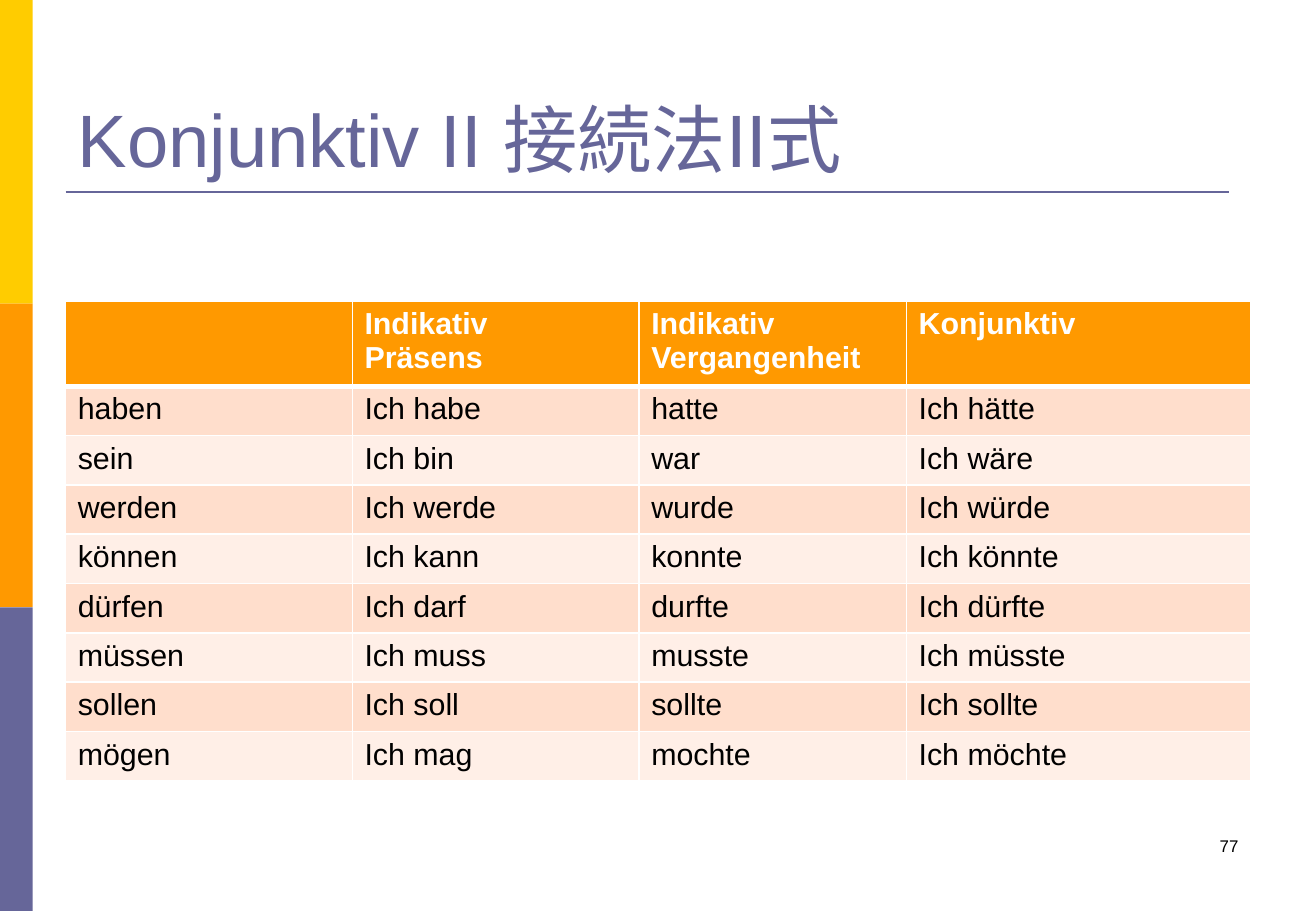
"""Build a slide with a table of German Konjunktiv II forms."""
from lxml.etree import SubElement
from pptx import Presentation
from pptx.dml.color import RGBColor
from pptx.enum.shapes import MSO_CONNECTOR, MSO_SHAPE
from pptx.enum.text import MSO_ANCHOR, PP_ALIGN
from pptx.oxml.ns import qn
from pptx.util import Inches, Pt

TITLE = "Konjunktiv II 接続法II式"
PAGE = "77"
HEADER = ["", "Indikativ\nPräsens", "Indikativ\nVergangenheit", "Konjunktiv"]
VERBS = [
    ("haben", "Ich habe", "hatte", "Ich hätte"),
    ("sein", "Ich bin", "war", "Ich wäre"),
    ("werden", "Ich werde", "wurde", "Ich würde"),
    ("können", "Ich kann", "konnte", "Ich könnte"),
    ("dürfen", "Ich darf", "durfte", "Ich dürfte"),
    ("müssen", "Ich muss", "musste", "Ich müsste"),
    ("sollen", "Ich soll", "sollte", "Ich sollte"),
    ("mögen", "Ich mag", "mochte", "Ich möchte"),
]
COLORS = {"yellow": "FFCC00", "orange": "FF9900", "violet": "666699",
          "dark": "FFDECC", "light": "FFEFE7", "white": "FFFFFF", "black": "000000"}
BARS = ["yellow", "orange", "violet"]
BAR_W, BAR_H = 0.27, 2.5
LEFT, WIDTH = 0.54, 9.75
TABLE_TOP, HEAD_H, BODY_H = 2.48, 0.65, 3.25
COL_WIDTHS = [2.36, 2.36, 2.2, 2.83]
FORMATS = {
    "title": {"size": Pt(44), "bold": False, "color": "violet"},
    "head": {"size": Pt(18), "bold": True, "color": "white"},
    "body": {"size": Pt(18), "bold": False, "color": "black"},
    "page": {"size": Pt(10), "bold": False, "color": "black"},
}


def rgb(name):
    return RGBColor.from_string(COLORS[name])


def write(tf, text, style, align=PP_ALIGN.LEFT):
    tf.text = text
    for p in tf.paragraphs:
        p.alignment = align
        p.font.name = "Arial"
        for r in p.runs:
            r.font.name = "Arial"
            for key, value in FORMATS[style].items():
                if key == "color":
                    r.font.color.rgb = rgb(value)
                else:
                    setattr(r.font, key, value)


def add_text(s, box, text, style, anchor, align):
    tf = s.shapes.add_textbox(*map(Inches, box)).text_frame
    tf.word_wrap = True
    tf.vertical_anchor = anchor
    write(tf, text, style, align)


def add_borders(cell, widths):
    tc_pr = cell._tc.get_or_add_tcPr()
    for i, (side, width) in enumerate(widths.items()):
        ln = tc_pr.makeelement(qn(f"a:ln{side}"), {"w": str(Pt(width))})
        fill = SubElement(ln, qn("a:solidFill"))
        SubElement(fill, qn("a:srgbClr"), val=COLORS["white"])
        tc_pr.insert(i, ln)


def add_frame(s):
    for i, name in enumerate(BARS):
        sp = s.shapes.add_shape(MSO_SHAPE.RECTANGLE, 0, Inches(i * BAR_H),
                                Inches(BAR_W), Inches(BAR_H))
        sp.shadow.inherit = False
        sp.fill.solid()
        sp.fill.fore_color.rgb = rgb(name)
        sp.line.fill.background()
    rule = s.shapes.add_connector(MSO_CONNECTOR.STRAIGHT,
                                  *map(Inches, (LEFT, 1.58, 10.11, 1.58)))
    rule.line.color.rgb = rgb("violet")
    rule.line.width = Pt(1.5)
    SubElement(rule._element.spPr, qn("a:effectLst"))


def add_verb_table(s):
    rows = [HEADER, *VERBS]
    table = s.shapes.add_table(len(rows), len(HEADER), Inches(LEFT), Inches(TABLE_TOP),
                               Inches(WIDTH), Inches(HEAD_H + BODY_H)).table
    for col, width in zip(table.columns, COL_WIDTHS):
        col.width = Inches(width)
    for i, row in enumerate(rows):
        table.rows[i].height = Inches(BODY_H / len(VERBS) if i else HEAD_H)
        fill = ("dark" if i % 2 else "light") if i else "orange"
        for j, text in enumerate(row):
            cell = table.cell(i, j)
            write(cell.text_frame, text, "body" if i else "head")
            cell.fill.solid()
            cell.fill.fore_color.rgb = rgb(fill)
            add_borders(cell, {"L": 1, "R": 1, "T": 3 if i == 1 else 1,
                               "B": 1 if i else 3})


def main():
    prs = Presentation()
    prs.slide_width, prs.slide_height = Inches(10.83), Inches(7.5)
    s = prs.slides.add_slide(prs.slide_layouts[6])
    add_frame(s)
    add_text(s, (LEFT, 0.3, WIDTH, 1.25), TITLE, "title", MSO_ANCHOR.BOTTOM, PP_ALIGN.LEFT)
    add_verb_table(s)
    add_text(s, (7.76, 6.83, 2.53, 0.5), PAGE, "page", MSO_ANCHOR.TOP, PP_ALIGN.RIGHT)
    prs.save("out.pptx")


if __name__ == "__main__":
    main()
